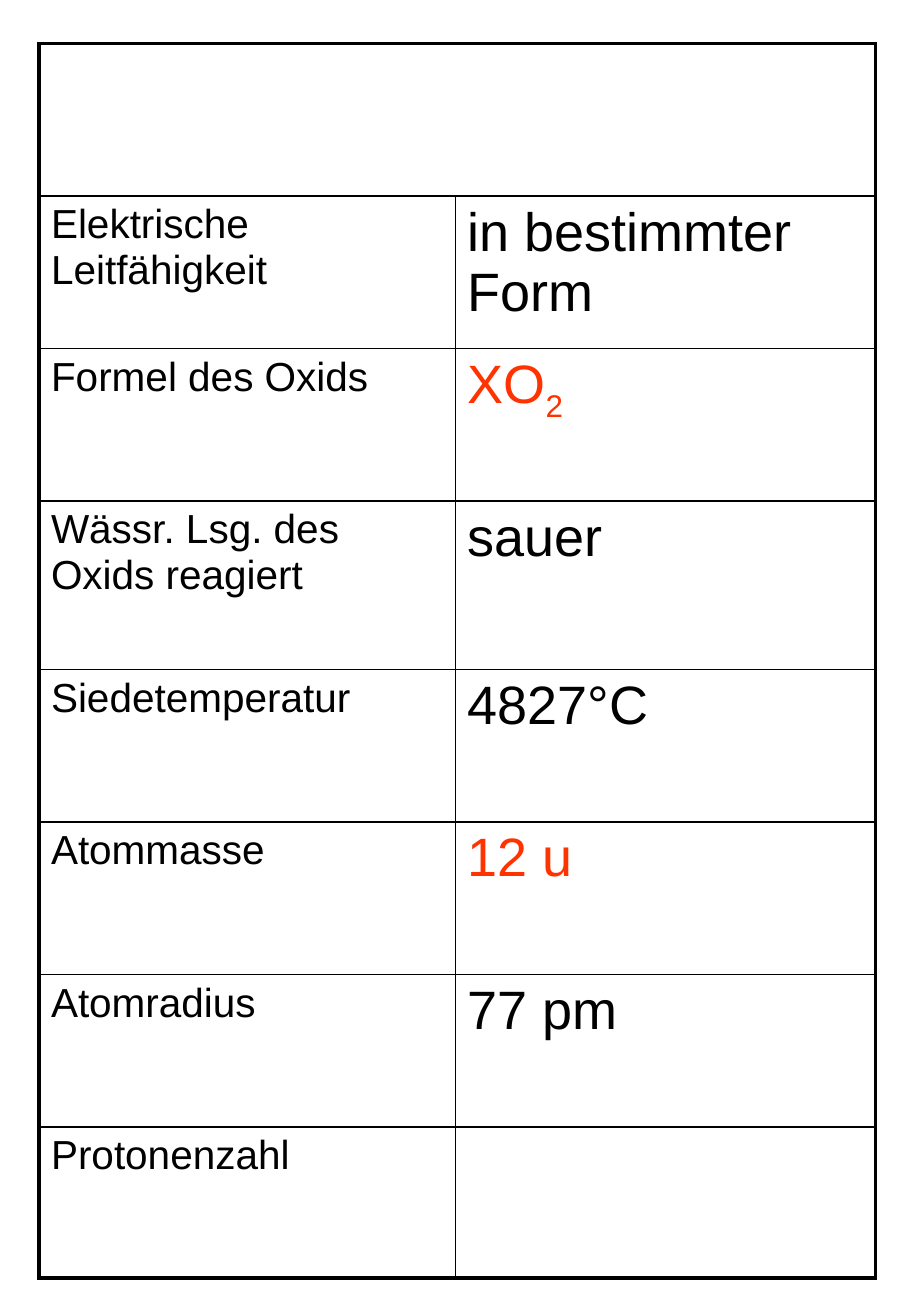
from dataclasses import dataclass

import pptx
import pptx.dml.color
import pptx.oxml
import pptx.oxml.ns
import pptx.util

PX = 914400 // 200
BLACK = "000000"
RED = "FF3300"
THIN = 1.0
THICK = 2.25


@dataclass(frozen=True)
class Property:
    label: str
    value: str = ""
    subscript: str = ""
    color: str = BLACK
    height: int = 251


PROPERTIES = [
    Property("Elektrische Leitfähigkeit", "in bestimmter Form"),
    Property("Formel des Oxids", "XO", subscript="2", color=RED),
    Property("Wässr. Lsg. des Oxids reagiert", "sauer", height=277),
    Property("Siedetemperatur", "4827°C"),
    Property("Atommasse", "12 u", color=RED),
    Property("Atomradius", "77 pm"),
    Property("Protonenzahl", height=249),
]
HEADER_HEIGHT = 251
COLUMN_WIDTHS = [686, 692]


def px(n: int) -> int:
    return pptx.util.Emu(n * PX)


def rgb(color: str) -> pptx.dml.color.RGBColor:
    return pptx.dml.color.RGBColor.from_string(color)


def add_text(p, text: str, *, size: int, color: str = BLACK, baseline: int = 0) -> None:
    r = p.add_run()
    r.text = text
    r.font.name = "Arial"
    r.font.size = pptx.util.Pt(size)
    r.font.color.rgb = rgb(color)
    if baseline:
        r.font._element.set("baseline", str(baseline * 1000))


def set_space_before(p, percent: int) -> None:
    ns = pptx.oxml.ns.nsdecls("a")
    p._p.get_or_add_pPr().append(pptx.oxml.parse_xml(
        f'<a:spcBef {ns}><a:spcPct val="{percent * 1000}"/></a:spcBef>'))


def set_border(cell, side: str, width: float) -> None:
    ns = pptx.oxml.ns.nsdecls("a")
    cell._tc.get_or_add_tcPr().append(pptx.oxml.parse_xml(
        f'<a:ln{side} {ns} w="{pptx.util.Pt(width)}"><a:solidFill>'
        f'<a:srgbClr val="{BLACK}"/></a:solidFill></a:ln{side}>'))


def format_cell(cell, row: int, col: int, last_row: int) -> None:
    cell.margin_left = cell.margin_right = px(20)
    cell.margin_top = cell.margin_bottom = px(10)
    outer = {"L": col == 0, "R": col == 1 or row == 0,
             "T": row == 0, "B": row == last_row}
    for side, is_outer in outer.items():
        set_border(cell, side, THICK if is_outer else THIN)
    cell.fill.background()


def fill_row(table, row: int, item: Property) -> None:
    label = table.cell(row, 0).text_frame.paragraphs[0]
    set_space_before(label, 20)
    add_text(label, item.label, size=24)
    if item.value:
        value = table.cell(row, 1).text_frame.paragraphs[0]
        set_space_before(value, 20)
        add_text(value, item.value, size=32, color=item.color)
        if item.subscript:
            add_text(value, item.subscript, size=32, color=item.color, baseline=-25)


def add_property_table(s) -> None:
    heights = [HEADER_HEIGHT] + [item.height for item in PROPERTIES]
    table = s.shapes.add_table(
        len(heights), len(COLUMN_WIDTHS), px(64), px(72),
        px(sum(COLUMN_WIDTHS)), px(sum(heights))).table
    table.first_row = False
    table.horz_banding = False
    for column, width in zip(table.columns, COLUMN_WIDTHS):
        column.width = px(width)
    for row, height in enumerate(heights):
        table.rows[row].height = px(height)
        for col in range(len(COLUMN_WIDTHS)):
            format_cell(table.cell(row, col), row, col, len(heights) - 1)
    table.cell(0, 0).merge(table.cell(0, 1))
    for row, item in enumerate(PROPERTIES, start=1):
        fill_row(table, row, item)


def main() -> None:
    prs = pptx.Presentation()
    prs.slide_width = px(1500)
    prs.slide_height = px(2166)
    s = prs.slides.add_slide(prs.slide_layouts[6])
    add_property_table(s)
    prs.save("out.pptx")


if __name__ == "__main__":
    main()
